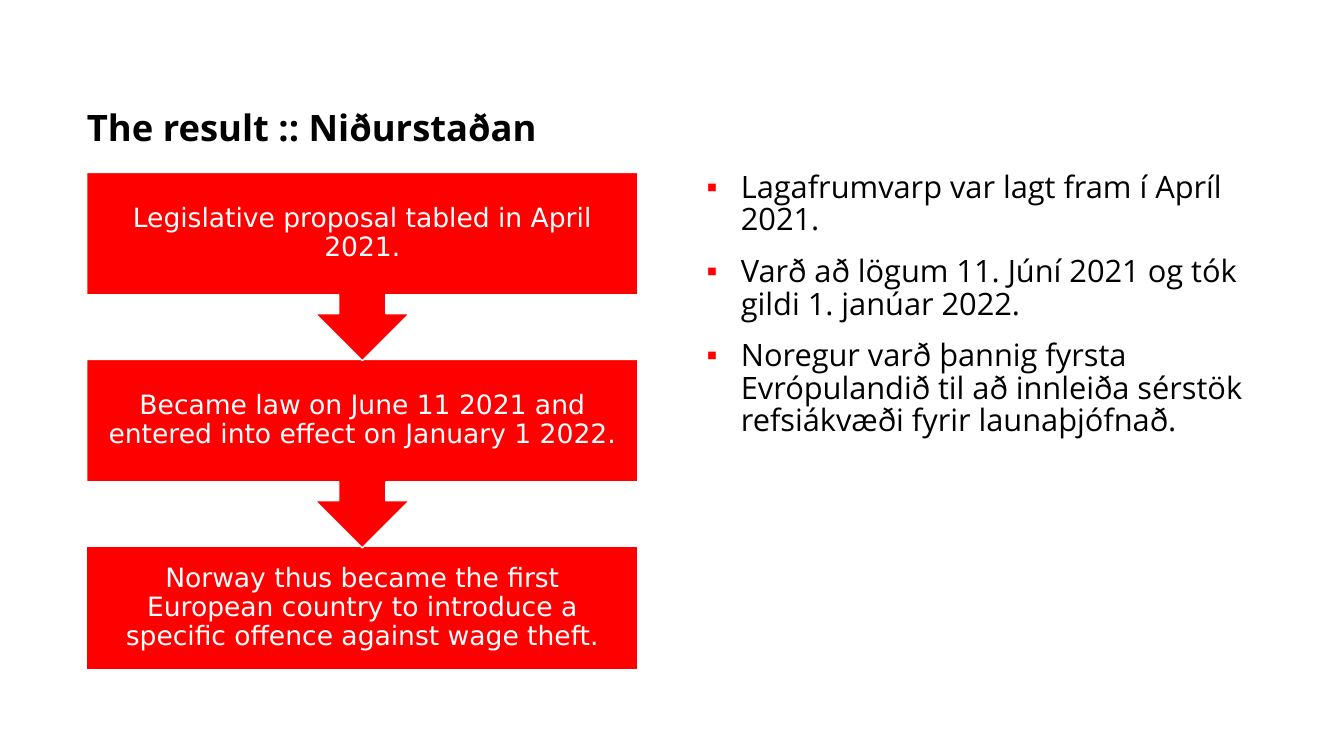
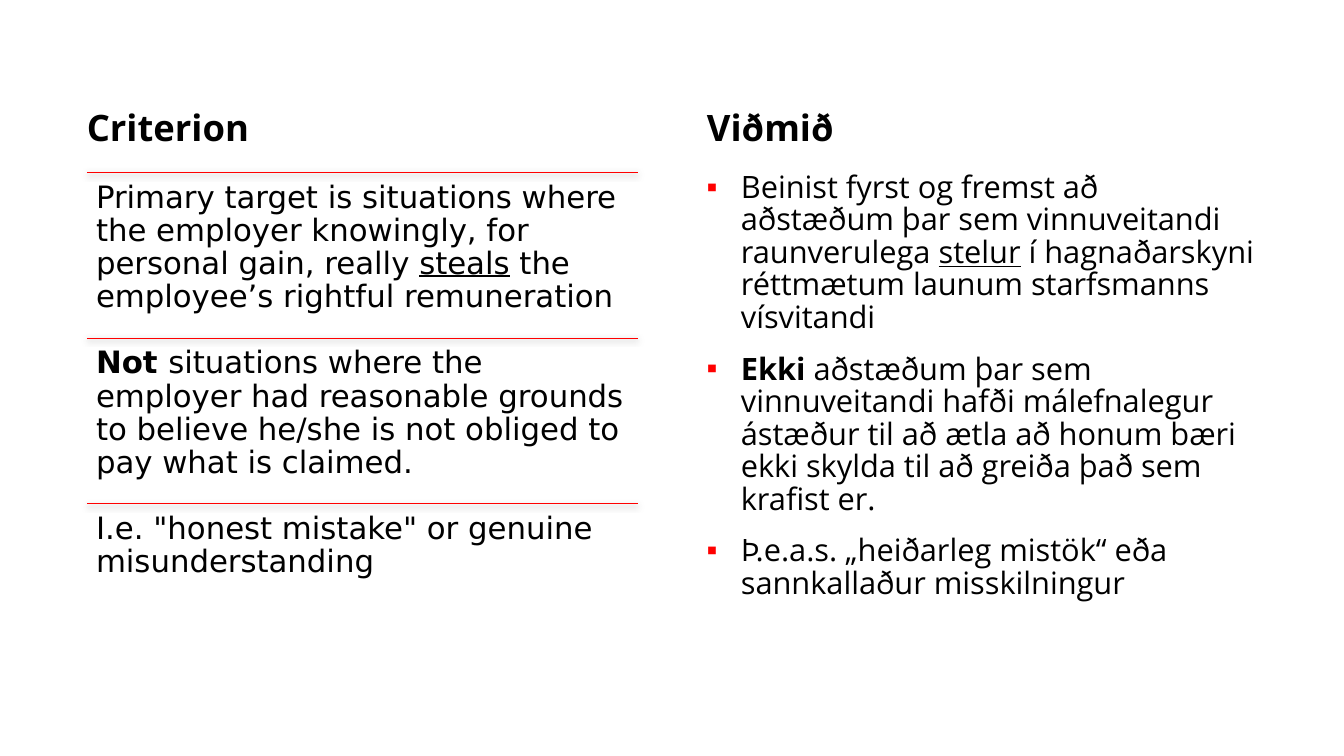
from lxml import etree
from pptx import Presentation
from pptx.dml.color import RGBColor
from pptx.enum.shapes import MSO_CONNECTOR, MSO_SHAPE
from pptx.enum.text import MSO_ANCHOR, MSO_AUTO_SIZE, PP_ALIGN
from pptx.oxml import parse_xml
from pptx.oxml.ns import nsdecls, qn
from pptx.util import Pt

RECT, CALLOUT = MSO_SHAPE.RECTANGLE, MSO_SHAPE.DOWN_ARROW_CALLOUT
STRAIGHT = MSO_CONNECTOR.STRAIGHT
TOP, MIDDLE, BOTTOM = MSO_ANCHOR.TOP, MSO_ANCHOR.MIDDLE, MSO_ANCHOR.BOTTOM
LEFT, CENTER = PP_ALIGN.LEFT, PP_ALIGN.CENTER

COLORS = {"accent": "FF0000", "text": "000000", "paper": "FFFFFF"}
HEAD_FONT, PANEL_FONT = "Open Sans", "DejaVu Sans"
MARGIN, TOP_Y, COL_W, COL_H = 62, 123.1, 393.6, 355
RIGHT_X, TITLE_TAB = 504.7, 443

RESULT = {
    "title": "The result :: Niðurstaðan",
    "panels": [
        "Legislative proposal tabled in April 2021.",
        "Became law on June 11 2021 and entered into effect on January 1 2022.",
        "Norway thus became the first European country to introduce a "
        "specific offence against wage theft.",
    ],
    "bullets": [
        [("Lagafrumvarp var lagt fram í Apríl 2021.", "")],
        [("Varð að lögum 11. Júní 2021 og tók gildi 1. janúar 2022.", "")],
        [("Noregur varð þannig fyrsta Evrópulandið til að innleiða sérstök "
          "refsiákvæði fyrir launaþjófnað.", "")],
    ],
}
CRITERION = {
    "title": "Criterion\tViðmið",
    "panels": [
        [("Primary target is situations where the employer knowingly, for "
          "personal gain, really ", ""), ("steals", "u"),
         (" the employee’s rightful remuneration", "")],
        [("Not ", "b"), ("situations where the employer had reasonable grounds "
                         "to believe he/she is not obliged to pay what is claimed.", "")],
        [('I.e. "honest mistake" or genuine misunderstanding', "")],
    ],
    "bullets": [
        [("Beinist fyrst og fremst að aðstæðum þar sem vinnuveitandi "
          "raunverulega ", ""), ("stelur", "u"),
         (" í hagnaðarskyni réttmætum launum starfsmanns vísvitandi", "")],
        [("Ekki", "b"), (" aðstæðum þar sem vinnuveitandi hafði málefnalegur "
                         "ástæður til að ætla að honum bæri ekki skylda til að "
                         "greiða það sem krafist er.", "")],
        [("Þ.e.a.s. „heiðarleg mistök“ eða sannkallaður misskilningur", "")],
    ],
}


def rgb(name):
    return RGBColor.from_string(COLORS[name])


def place(sp, x, y, w, h):
    sp.left, sp.top, sp.width, sp.height = Pt(x), Pt(y), Pt(w), Pt(h)


def setup_frame(tf, anchor, inset=0):
    tf.word_wrap = True
    tf.auto_size = MSO_AUTO_SIZE.NONE
    tf.vertical_anchor = anchor
    tf.margin_left = tf.margin_top = tf.margin_right = tf.margin_bottom = Pt(inset)


def write(p, parts, font, size, color="text", align=LEFT, spacing=0.9):
    p.alignment, p.line_spacing = align, spacing
    for text, style in parts:
        r = p.add_run()
        r.text = text
        r.font.name, r.font.size = font, Pt(size)
        r.font.color.rgb = rgb(color)
        r.font.bold = "b" in style
        r.font.underline = "u" in style


def add_bullet(p):
    pPr = p._p.get_or_add_pPr()
    pPr.set("marL", str(Pt(24.5)))
    pPr.set("indent", str(-Pt(24.5)))
    clr = etree.SubElement(pPr, qn("a:buClr"))
    etree.SubElement(clr, qn("a:srgbClr"), val=COLORS["accent"])
    etree.SubElement(pPr, qn("a:buChar"), char="▪")


def add_base(prs, content):
    s = prs.slides.add_slide(prs.slide_layouts[1])
    title, body = s.placeholders
    place(title, MARGIN, 47.5, 836.6, 59)
    setup_frame(title.text_frame, BOTTOM)
    p = title.text_frame.paragraphs[0]
    if "\t" in content["title"]:
        tabs = etree.SubElement(p._p.get_or_add_pPr(), qn("a:tabLst"))
        etree.SubElement(tabs, qn("a:tab"), pos=str(Pt(TITLE_TAB)), algn="l")
    write(p, [(content["title"], "b")], HEAD_FONT, 26)

    place(body, RIGHT_X, TOP_Y, COL_W, COL_H)
    tf = body.text_frame
    setup_frame(tf, TOP)
    for i, parts in enumerate(content["bullets"]):
        p = tf.add_paragraph() if i else tf.paragraphs[0]
        add_bullet(p)
        p.space_before = Pt(13.7 if i else 0)
        write(p, parts, HEAD_FONT, 22, spacing=0.88)
    return s


def add_flow(s, steps):
    box_h, callout_h = 87.6, 134.6
    pitch = (COL_H - box_h) / (len(steps) - 1)
    for i, text in reversed(list(enumerate(steps))):
        last = i == len(steps) - 1
        sp = s.shapes.add_shape(RECT if last else CALLOUT, Pt(MARGIN),
                                Pt(TOP_Y + i * pitch), Pt(COL_W),
                                Pt(box_h if last else callout_h))
        sp.shadow.inherit = False
        sp.fill.solid()
        sp.fill.fore_color.rgb = rgb("accent")
        sp.line.color.rgb = rgb("paper")
        sp.line.width = Pt(1)
        setup_frame(sp.text_frame, MIDDLE, 10.8)
        write(sp.text_frame.paragraphs[0], [(text, "")], PANEL_FONT, 19,
              "paper", CENTER)


def add_ruled_list(s, items):
    row_h = COL_H / len(items)
    for i, parts in enumerate(items):
        y = TOP_Y + i * row_h
        rule = s.shapes.add_connector(STRAIGHT, Pt(MARGIN), Pt(y),
                                      Pt(MARGIN + COL_W), Pt(y))
        rule.line.color.rgb = rgb("accent")
        rule.line.width = Pt(0.5)
        rule._element.spPr.append(parse_xml(
            f'<a:effectLst {nsdecls("a")}><a:outerShdw blurRad="{Pt(4.5)}" '
            f'dist="{Pt(1.5)}" dir="5400000" algn="ctr" rotWithShape="0">'
            f'<a:srgbClr val="{COLORS["text"]}"><a:alpha val="63000"/></a:srgbClr>'
            '</a:outerShdw></a:effectLst>'))
        sp = s.shapes.add_textbox(Pt(MARGIN), Pt(y), Pt(COL_W), Pt(row_h))
        setup_frame(sp.text_frame, TOP, 6.6)
        write(sp.text_frame.paragraphs[0], parts, PANEL_FONT, 22)


def main():
    prs = Presentation()
    prs.slide_width, prs.slide_height = Pt(960), Pt(540)
    add_flow(add_base(prs, RESULT), RESULT["panels"])
    add_ruled_list(add_base(prs, CRITERION), CRITERION["panels"])
    prs.save("out.pptx")


if __name__ == "__main__":
    main()
